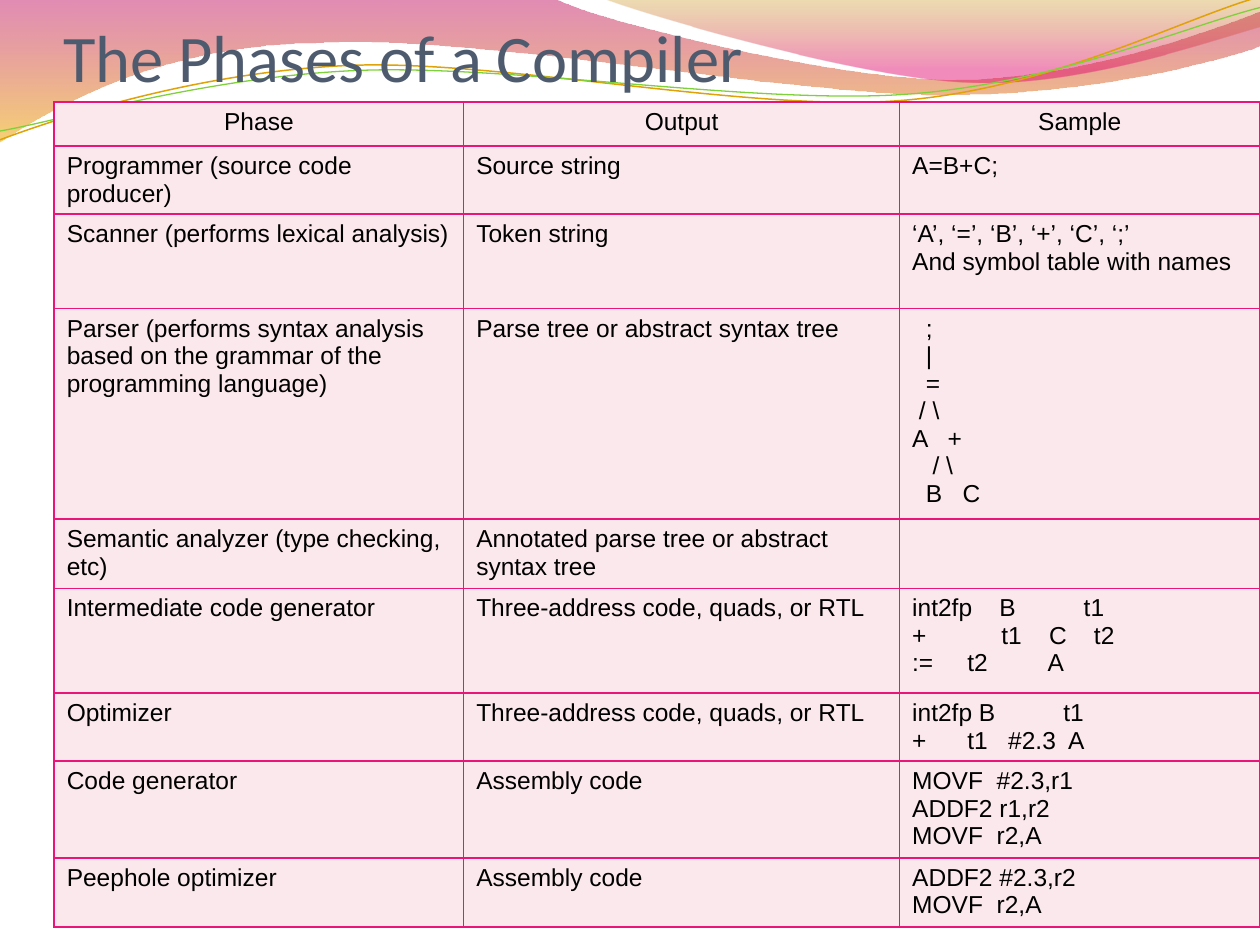
from dataclasses import dataclass
from typing import Optional

import lxml.etree
import pptx
import pptx.dml.color
import pptx.enum.text
import pptx.oxml.ns
import pptx.util

RGBColor = pptx.dml.color.RGBColor
Inches = pptx.util.Inches
Pt = pptx.util.Pt
qn = pptx.oxml.ns.qn

MAGENTA = RGBColor(0xBD, 0x00, 0x59)
AMBER = RGBColor(0xF0, 0xAB, 0x00)
OCHRE = RGBColor(0xC3, 0x8B, 0x00)
ROSE = RGBColor(0xE1, 0x00, 0x6B)
GOLD = RGBColor(0xE0, 0xA2, 0x09)
GREEN = RGBColor(0x7F, 0xD1, 0x3B)
SLATE = RGBColor(0x4E, 0x5B, 0x6F)
BLACK = RGBColor(0x00, 0x00, 0x00)
BORDER = RGBColor(0xEA, 0x15, 0x7A)
BLUSH = RGBColor(0xFB, 0xE8, 0xEC)

SLIDE_WIDTH, SLIDE_HEIGHT = Inches(10), Inches(7.5)
UNITS_PER_INCH = 1000


@dataclass(frozen=True)
class Stop:
    position: float
    color: RGBColor
    opacity: int


@dataclass(frozen=True)
class Wave:
    """A start point, then lines (x, y) and Bezier curves (three points), in inches."""
    start: tuple
    segments: tuple
    stops: tuple = ()
    stroke: Optional[RGBColor] = None
    weight: float = 0


@dataclass(frozen=True)
class Phase:
    name: str
    output: str
    sample: str
    height: float


WAVES = (
    Wave((0, -0.01), (
        (4.4, -0.01), (4.76, 0.17, 6.64, 0.63, 7.58, 0.63),
        (8.53, 0.63, 9.58, 0.26, 10, 0.09), (10.01, 0.36),
        (9.83, 0.44, 8.7, 0.76, 7.46, 0.75), (6.22, 0.75, 3.82, 0.28, 2.57, 0.34),
        (1.29, 0.35, 0.46, 0.83, -0.01, 1.13), (0, -0.01)),
        stops=(Stop(0, MAGENTA, 45), Stop(1, AMBER, 55))),
    Wave((4.79, -0.01), (
        (5.09, 0.11, 6.82, 0.62, 7.69, 0.65), (8.56, 0.69, 9.61, 0.32, 10, 0.21),
        (10, 0), (4.79, -0.01)),
        stops=(Stop(0, OCHRE, 30), Stop(0.8, ROSE, 45))),
    Wave((0, 1.11), (
        (0.48, 0.93, 1.58, 0.57, 2.77, 0.52), (3.95, 0.47, 5.93, 0.89, 7.13, 0.8),
        (8.33, 0.71, 9.38, 0.15, 9.98, -0.02)), stroke=GOLD, weight=0.85),
    Wave((0, 1.04), (
        (0.47, 0.96, 1.64, 0.61, 2.83, 0.56), (4.03, 0.51, 5.97, 0.83, 7.17, 0.75),
        (8.36, 0.67, 9.41, 0.21, 10, 0.06)), stroke=GREEN, weight=0.75),
)

COLUMN_WIDTHS = (3.25, 3.46, 2.86)
TABLE_TOP = 0.81
PHASES = (
    Phase("Phase", "Output", "Sample", 0.35),
    Phase("Programmer (source code producer)", "Source string", "A=B+C;", 0.54),
    Phase("Scanner (performs lexical analysis)", "Token string",
          "‘A’, ‘=’, ‘B’, ‘+’, ‘C’, ‘;’\nAnd symbol table with names", 0.75),
    Phase("Parser (performs syntax analysis based on the grammar of the "
          "programming language)", "Parse tree or abstract syntax tree",
          "  ;\n  |\n  =\n / \\\nA   +\n   / \\\n  B   C", 1.67),
    Phase("Semantic analyzer (type checking, etc)",
          "Annotated parse tree or abstract syntax tree", "", 0.55),
    Phase("Intermediate code generator", "Three-address code, quads, or RTL",
          "int2fp    B          t1\n+           t1    C    t2\n:=     t2         A", 0.83),
    Phase("Optimizer", "Three-address code, quads, or RTL",
          "int2fp B          t1\n+      t1   #2.3  A", 0.54),
    Phase("Code generator", "Assembly code",
          "MOVF  #2.3,r1\nADDF2 r1,r2\nMOVF  r2,A", 0.77),
    Phase("Peephole optimizer", "Assembly code", "ADDF2 #2.3,r2\nMOVF  r2,A", 0.55),
)


def bend_segments(shape, wave: Wave) -> None:
    """Merge the three lines drawn through each curve's points into one Bezier."""
    lines = iter(list(shape._element.spPr.iter(qn("a:lnTo"))))
    for segment in wave.segments:
        first = next(lines)
        if len(segment) == 2:
            continue
        curve = lxml.etree.Element(qn("a:cubicBezTo"))
        first.addprevious(curve)
        for line in (first, next(lines), next(lines)):
            curve.append(line[0])
            line.getparent().remove(line)


def draw_wave(slide, wave: Wave) -> None:
    points = [tuple(round(value * UNITS_PER_INCH) for value in segment[i:i + 2])
              for segment in (wave.start, *wave.segments)
              for i in range(0, len(segment), 2)]
    builder = slide.shapes.build_freeform(*points[0], scale=Inches(1) / UNITS_PER_INCH)
    builder.add_line_segments(points[1:], close=bool(wave.stops))
    shape = builder.convert_to_shape()
    bend_segments(shape, wave)
    shape.shadow.inherit = False
    if wave.stops:
        shape.line.fill.background()
        shape.fill.gradient()
        shape.fill.gradient_angle = 270
        for gradient_stop, stop in zip(shape.fill.gradient_stops, wave.stops):
            gradient_stop.position = stop.position
            gradient_stop.color.rgb = stop.color
        for color, stop in zip(shape._element.spPr.iter(qn("a:srgbClr")), wave.stops):
            lxml.etree.SubElement(color, qn("a:alpha"), val=str(stop.opacity * 1000))
    else:
        shape.fill.background()
        shape.line.color.rgb = wave.stroke
        shape.line.width = Pt(wave.weight)


def format_title(slide) -> None:
    title = slide.shapes.title
    title.left, title.top = int(SLIDE_WIDTH * 0.05), 0
    title.width, title.height = int(SLIDE_WIDTH * 0.9), Inches(0.76)
    frame = title.text_frame
    frame.text = "The Phases of a Compiler"
    frame.auto_size = pptx.enum.text.MSO_AUTO_SIZE.NONE
    frame.vertical_anchor = pptx.enum.text.MSO_ANCHOR.BOTTOM
    frame.margin_left = frame.margin_right = frame.margin_bottom = 0
    frame.margin_top = Inches(0.05)
    paragraph = frame.paragraphs[0]
    paragraph.alignment = pptx.enum.text.PP_ALIGN.LEFT
    font = paragraph.runs[0].font
    font.name, font.size, font.color.rgb = "Calibri", Pt(38), SLATE


def add_borders(cell) -> None:
    properties = cell._tc.get_or_add_tcPr()
    for side in ("a:lnL", "a:lnR", "a:lnT", "a:lnB"):
        line = lxml.etree.SubElement(properties, qn(side), w=str(Pt(1)))
        fill = lxml.etree.SubElement(line, qn("a:solidFill"))
        lxml.etree.SubElement(fill, qn("a:srgbClr"), val=str(BORDER))


def fill_cell(cell, text: str, is_header: bool) -> None:
    add_borders(cell)
    cell.fill.solid()
    cell.fill.fore_color.rgb = BLUSH
    paragraph = cell.text_frame.paragraphs[0]
    paragraph.text = text
    if is_header:
        paragraph.alignment = pptx.enum.text.PP_ALIGN.CENTER
    for run in paragraph.runs:
        run.font.name, run.font.size, run.font.color.rgb = "Arial", Pt(14), BLACK


def add_phase_table(slide) -> None:
    width = Inches(sum(COLUMN_WIDTHS))
    height = Inches(sum(phase.height for phase in PHASES))
    table = slide.shapes.add_table(
        len(PHASES), len(COLUMN_WIDTHS), SLIDE_WIDTH - width, Inches(TABLE_TOP),
        width, height).table
    table.first_row = table.horz_banding = False
    for column, column_width in zip(table.columns, COLUMN_WIDTHS):
        column.width = Inches(column_width)
    for index, (row, phase) in enumerate(zip(table.rows, PHASES)):
        row.height = Inches(phase.height)
        for cell, text in zip(row.cells, (phase.name, phase.output, phase.sample)):
            fill_cell(cell, text, is_header=index == 0)


def main() -> None:
    presentation = pptx.Presentation()
    presentation.slide_width, presentation.slide_height = SLIDE_WIDTH, SLIDE_HEIGHT
    slide = presentation.slides.add_slide(presentation.slide_layouts[5])
    for wave in WAVES:
        draw_wave(slide, wave)
    format_title(slide)
    # The title belongs in front of the waves.
    slide.shapes._spTree.append(slide.shapes.title._element)
    add_phase_table(slide)
    presentation.save("out.pptx")


if __name__ == "__main__":
    main()
